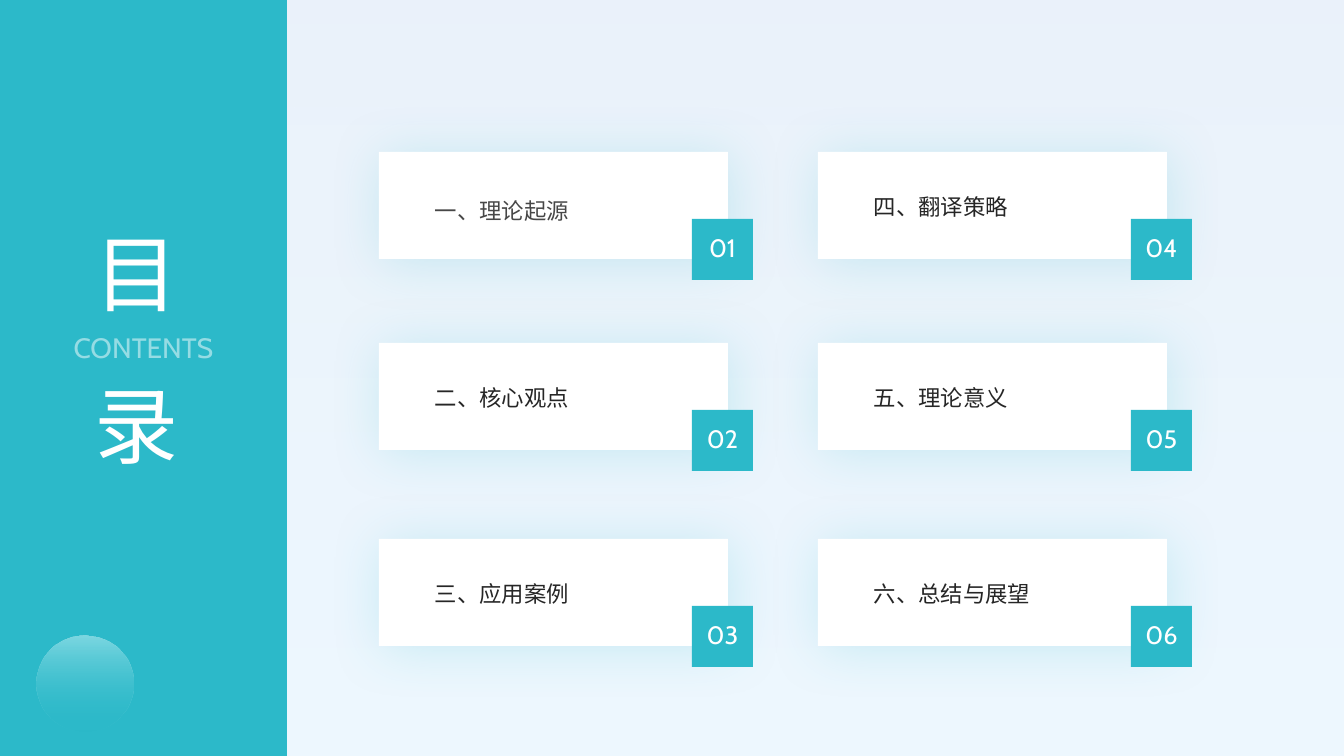
from lxml import etree
from pptx import Presentation
from pptx import util as u
from pptx.dml import color
from pptx.enum import shapes, text
from pptx.oxml import ns

HUES = {
    "teal": "2CB9C9", "mint": "7DD8E2", "white": "FFFFFF",
    "sky": "BFE4FF", "mist": "C1D8F2", "ink": "262626", "gray": "474747",
}
KIND = shapes.MSO_SHAPE
ALIGN = text.PP_ALIGN
TITLES = ["一、理论起源", "二、核心观点", "三、应用案例",
          "四、翻译策略", "五、理论意义", "六、总结与展望"]
ROWS = [152, 343, 539]
LEFT, PITCH = 379, 439


def px(n):
    return u.Emu(round(n * 12192000 / 1344))


def sub(parent, tag, **attrs):
    """Append a child element with the given attributes."""
    node = etree.SubElement(parent, ns.qn(tag))
    for key, val in attrs.items():
        node.set(key, str(val))
    return node


def tint(parent, hue, alpha):
    """Add a colour with its opacity in percent."""
    node = sub(parent, "a:srgbClr", val=HUES[hue])
    sub(node, "a:alpha", val=alpha * 1000)


class Deck:
    font = "Cabin"

    def __init__(self):
        self.prs = Presentation()
        self.prs.slide_width, self.prs.slide_height = px(1344), px(756)
        self.slide = self.prs.slides.add_slide(self.prs.slide_layouts[6])

    def shape(self, kind, x, y, w, h, hue=None):
        item = self.slide.shapes.add_shape(kind, px(x), px(y), px(w), px(h))
        item.shadow.inherit = False
        item.line.fill.background()
        if hue:
            item.fill.solid()
            item.fill.fore_color.rgb = color.RGBColor.from_string(HUES[hue])
        return item

    def fade(self, item, angle, stops):
        """Fill a shape with a linear gradient of (hue, opacity) stops."""
        item.fill.gradient()
        grad = item.element.spPr.find(ns.qn("a:gradFill"))
        for child in list(grad):
            grad.remove(child)
        group = sub(grad, "a:gsLst")
        for i, (hue, alpha) in enumerate(stops):
            tint(sub(group, "a:gs", pos=i * 100000), hue, alpha)
        sub(grad, "a:lin", ang=angle * 60000, scaled=0)

    def glow(self, item):
        """Give a shape a soft teal shadow."""
        group = item.element.spPr.find(ns.qn("a:effectLst"))
        node = sub(group, "a:outerShdw", blurRad=u.Pt(39), dist=u.Pt(3),
                   dir=45 * 60000, algn="tl", rotWithShape=0)
        tint(node, "teal", 20)

    def label(self, x, y, w, h, lines, size, hue, align=ALIGN.LEFT,
              flush=False, alpha=None):
        """Add (words, line spacing) paragraphs; flush drops the insets
        and centres them vertically."""
        box = self.slide.shapes.add_textbox(px(x), px(y), px(w), px(h))
        frame = box.text_frame
        frame.word_wrap = True
        if flush:
            frame.vertical_anchor = text.MSO_ANCHOR.MIDDLE
            frame.margin_left = frame.margin_right = 0
            frame.margin_top = frame.margin_bottom = 0
        for i, (words, gap) in enumerate(lines):
            para = frame.add_paragraph() if i else frame.paragraphs[0]
            para.alignment, para.line_spacing = align, gap
            run = para.add_run()
            run.text = words
            run.font.name, run.font.size = self.font, u.Pt(size)
            run.font.color.rgb = color.RGBColor.from_string(HUES[hue])
        if alpha:
            for node in box.element.iter(ns.qn("a:srgbClr")):
                sub(node, "a:alpha", val=alpha * 1000)

    def card(self, x, y, num, title):
        self.glow(self.shape(KIND.RECTANGLE, x, y, 349, 107, "white"))
        badge = self.shape(KIND.ROUNDED_RECTANGLE, x + 313, y + 67, 61, 61,
                           "teal")
        badge.adjustments[0] = 0
        self.label(x + 316, y + 75, 55, 43, [(f"{num:02}", None)], 18,
                   "white", ALIGN.CENTER)
        hue, gap = ("gray", 1.3) if num == 1 else ("ink", None)
        self.label(x + 56, y + 10, 253, 90, [(title, gap)], 16, hue,
                   flush=True)


def main():
    deck = Deck()
    back = deck.shape(KIND.RECTANGLE, 0, 0, 1344, 756)
    deck.fade(back, 270, [("sky", 27), ("mist", 33)])
    deck.shape(KIND.RECTANGLE, -1, 0, 288, 756, "teal")
    deck.label(85, 217, 119, 302, [("目", 1.0), ("录", 1.5)], 60, "white")
    deck.label(17, 327, 253, 40, [("CONTENTS", None)], 20, "white",
               ALIGN.CENTER, flush=True, alpha=50)
    disc = deck.shape(KIND.OVAL, 37, 636, 96, 96)
    deck.fade(disc, 90, [("mint", 100), ("teal", 0)])
    for i, title in enumerate(TITLES):
        col, row = divmod(i, len(ROWS))
        deck.card(LEFT + col * PITCH, ROWS[row], i + 1, title)
    deck.prs.save("out.pptx")


if __name__ == "__main__":
    main()
